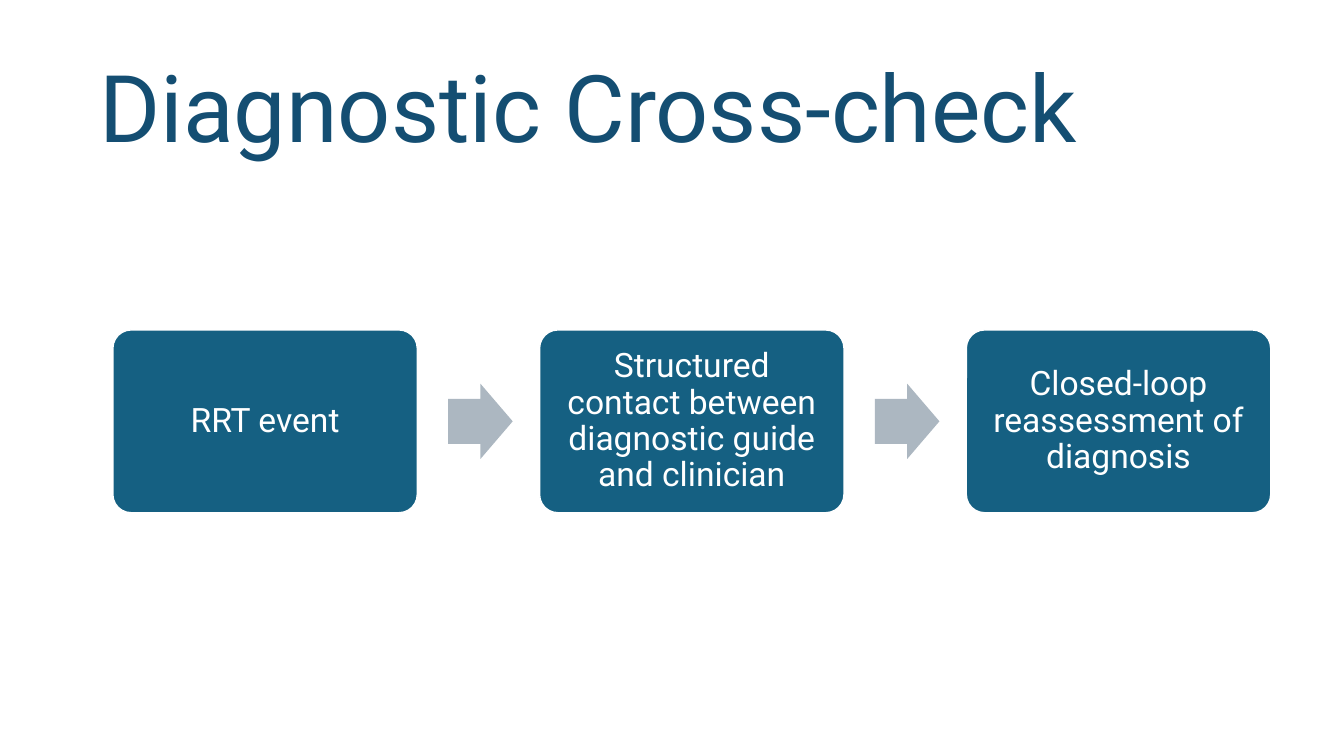
"""Build the Diagnostic Cross-check slide: three steps joined by arrows."""
from dataclasses import dataclass

import pptx
import pptx.dml.color
import pptx.enum.shapes
import pptx.enum.text
import pptx.util

Inches = pptx.util.Inches
Pt = pptx.util.Pt
SHAPE = pptx.enum.shapes.MSO_SHAPE
ALIGN = pptx.enum.text.PP_ALIGN

FONT = "Roboto"
COLORS = {"title": "144E72", "step": "156082", "arrow": "ACB7C1", "white": "FFFFFF"}
STEP_LEFT, STEP_PITCH = 1.68, 6.35
ARROW_OFFSET = 4.99


@dataclass
class Step:
    left: float
    text: str


STEPS = [
    Step(STEP_LEFT + i * STEP_PITCH, text)
    for i, text in enumerate([
        "RRT event",
        "Structured contact between diagnostic guide and clinician",
        "Closed-loop reassessment of diagnosis",
    ])
]


def rgb(name: str) -> pptx.dml.color.RGBColor:
    return pptx.dml.color.RGBColor.from_string(COLORS[name])


def set_text(sp, text: str, size: float, color: str, align, inset_x: float, inset_y: float) -> None:
    tf = sp.text_frame
    tf.text = text
    tf.word_wrap = True
    tf.vertical_anchor = pptx.enum.text.MSO_ANCHOR.MIDDLE
    tf.margin_left = tf.margin_right = Inches(inset_x)
    tf.margin_top = tf.margin_bottom = Inches(inset_y)
    p = tf.paragraphs[0]
    p.alignment = align
    p.line_spacing = 0.9
    r = p.runs[0]
    r.font.name = FONT
    r.font.size = Pt(size)
    r.font.color.rgb = rgb(color)


def add_title(s, text: str) -> None:
    sp = s.shapes.add_textbox(Inches(1.38), Inches(0.63), Inches(17.25), Inches(2.07))
    set_text(sp, text, 100, "title", ALIGN.LEFT, 0.1, 0.05)


def add_step(s, step: Step) -> None:
    sp = s.shapes.add_shape(
        SHAPE.ROUNDED_RECTANGLE, Inches(step.left), Inches(4.91), Inches(4.53), Inches(2.72)
    )
    sp.adjustments[0] = 0.1
    sp.shadow.inherit = False
    sp.fill.solid()
    sp.fill.fore_color.rgb = rgb("step")
    sp.line.color.rgb = rgb("white")
    sp.line.width = Pt(1.5)
    set_text(sp, step.text, 36, "white", ALIGN.CENTER, 0.15, 0.15)


def add_arrow(s, left: float) -> None:
    sp = s.shapes.add_shape(
        SHAPE.RIGHT_ARROW, Inches(left), Inches(5.71), Inches(0.96), Inches(1.12)
    )
    sp.adjustments[0] = 0.6
    sp.adjustments[1] = 0.5
    sp.shadow.inherit = False
    sp.fill.solid()
    sp.fill.fore_color.rgb = rgb("arrow")
    sp.line.fill.background()


def main() -> None:
    prs = pptx.Presentation()
    prs.slide_width, prs.slide_height = Inches(20), Inches(11.25)
    s = prs.slides.add_slide(prs.slide_layouts[6])
    add_title(s, "Diagnostic Cross-check")
    for step in STEPS:
        add_step(s, step)
    for step in STEPS[:-1]:
        add_arrow(s, step.left + ARROW_OFFSET)
    prs.save("out.pptx")


if __name__ == "__main__":
    main()
